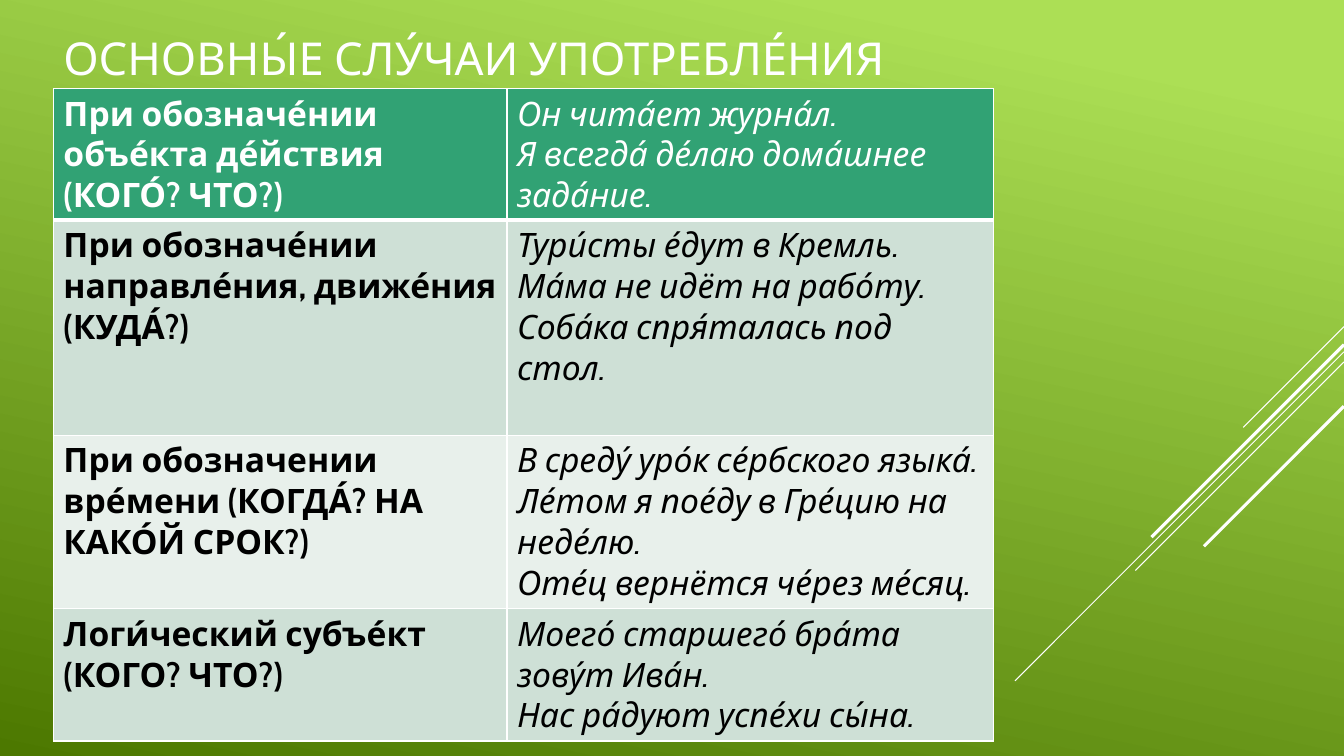
import pptx
import pptx.dml.color
import pptx.enum.shapes
import pptx.enum.text
import pptx.util
from lxml import etree

Pt = pptx.util.Pt
FONT = "Cabin"
COLORS = {
    "white": "FFFFFF", "black": "000000", "head": "31A274",
    "band": "CEE0D6", "pale": "E8F0EB", "lime": "ACDF55", "moss": "4C7800",
}
TITLE = "ОСНОВНЫ́Е СЛУ́ЧАИ УПОТРЕБЛЕ́НИЯ"
ROWS = [
    (94, ["При обозначе́нии объе́кта де́йствия (КОГО́? ЧТО?)"],
     ["Он чита́ет журна́л.", "Я всегда́ де́лаю дома́шнее зада́ние."]),
    (153.5, ["При обозначе́нии направле́ния, движе́ния", "(КУДА́?)"],
     ["Тури́сты е́дут в Кремль.", "Ма́ма не идёт на рабо́ту.", "Соба́ка спря́талась под стол."]),
    (124, ["При обозначении вре́мени (КОГДА́? НА КАКО́Й СРОК?)"],
     ["В среду́ уро́к се́рбского языка́.", "Ле́том я пое́ду в Гре́цию на неде́лю.",
      "Оте́ц вернётся че́рез ме́сяц."]),
    (94.5, ["Логи́ческий субъе́кт (КОГО? ЧТО?)"],
     ["Моего́ старшего́ бра́та зову́т Ива́н.", "Нас ра́дуют успе́хи сы́на."]),
]
COLS = [324, 347.76]
RAYS = [(233.3, 72, 0.75), (251.3, 235, 0.75), (258.5, 149, 0.75),
        (246.2, 137.5, 2.25), (290.2, 100, 2.25)]
WIDE, HIGH = 960, 540
LEFT, TOP = 38.16, 63.36


def rgb(name):
    return pptx.dml.color.RGBColor.from_string(COLORS[name])


def write(frame, lines, size=24, color="black", bold=False, italic=False):
    frame.word_wrap = True
    for i, line in enumerate(lines):
        para = frame.paragraphs[0] if i == 0 else frame.add_paragraph()
        run = para.add_run()
        run.text = line
        font = run.font
        font.name, font.size = FONT, Pt(size)
        font.bold, font.italic = bold, italic
        font.color.rgb = rgb(color)


def edge(cell, low):
    props = cell._tc.get_or_add_tcPr()
    ns = "{http://schemas.openxmlformats.org/drawingml/2006/main}"
    for side, width in zip("LRTB", (1, 1, 1, low)):
        line = etree.SubElement(props, ns + "ln" + side, w=str(Pt(width)))
        fill = etree.SubElement(line, ns + "solidFill")
        etree.SubElement(fill, ns + "srgbClr", val=COLORS["white"])


def draw_back(slide):
    fill = slide.background.fill
    fill.gradient()
    fill.gradient_angle = 258
    for stop, name, place in zip(fill.gradient_stops, ("lime", "moss"), (0.1, 1)):
        stop.color.rgb = rgb(name)
        stop.position = place


def draw_rays(slide):
    for top, run, width in RAYS:
        ray = slide.shapes.add_connector(
            pptx.enum.shapes.MSO_CONNECTOR.STRAIGHT,
            Pt(WIDE), Pt(top), Pt(WIDE - run), Pt(top + run))
        ray.line.color.rgb = rgb("white")
        ray.line.width = Pt(width)
        etree.SubElement(ray._element.spPr,
                         "{http://schemas.openxmlformats.org/drawingml/2006/main}effectLst")


def draw_title(slide):
    box = slide.shapes.add_textbox(Pt(LEFT), Pt(19.44), Pt(sum(COLS)), Pt(43.2))
    box.text_frame.vertical_anchor = pptx.enum.text.MSO_ANCHOR.MIDDLE
    write(box.text_frame, [TITLE], size=32.4, color="white")


def draw_table(slide):
    total = sum(row[0] for row in ROWS)
    table = slide.shapes.add_table(len(ROWS), len(COLS), Pt(LEFT), Pt(TOP),
                                   Pt(sum(COLS)), Pt(total)).table
    table.horz_banding = False
    for col, width in zip(table.columns, COLS):
        col.width = Pt(width)
    for r, (height, *texts) in enumerate(ROWS):
        table.rows[r].height = Pt(height)
        shade = "head" if r == 0 else ("pale", "band")[r % 2]
        for c, lines in enumerate(texts):
            cell = table.cell(r, c)
            edge(cell, 3 if r == 0 else 1)
            cell.fill.solid()
            cell.fill.fore_color.rgb = rgb(shade)
            write(cell.text_frame, lines, color="black" if r else "white",
                  bold=c == 0, italic=c == 1)


def main():
    deck = pptx.Presentation()
    deck.slide_width, deck.slide_height = Pt(WIDE), Pt(HIGH)
    slide = deck.slides.add_slide(deck.slide_layouts[6])
    draw_back(slide)
    draw_rays(slide)
    draw_title(slide)
    draw_table(slide)
    deck.save("out.pptx")


if __name__ == "__main__":
    main()
